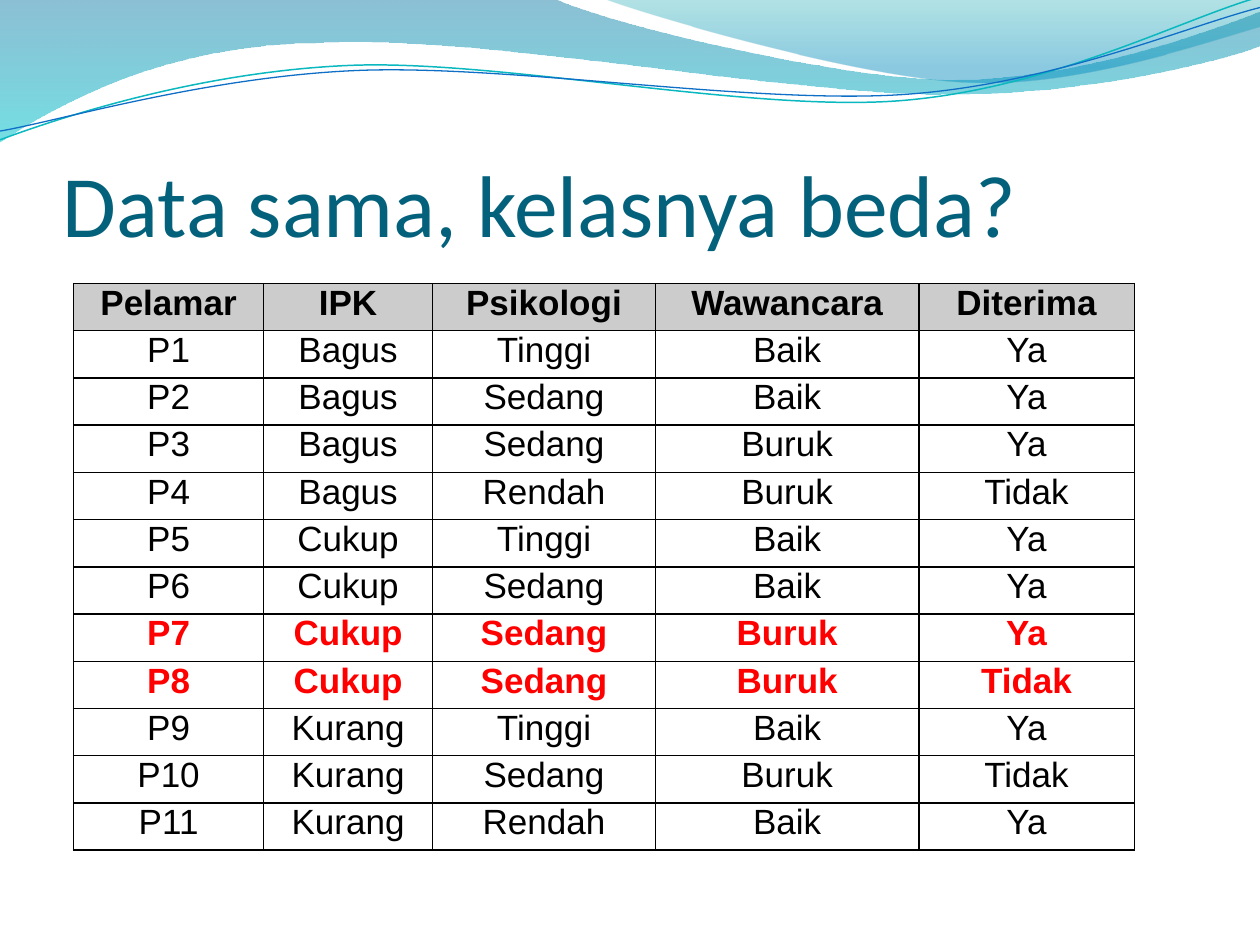
from dataclasses import dataclass
from math import cos, radians, sin

from lxml import etree
from pptx import Presentation
from pptx.dml.color import RGBColor
from pptx.enum.text import MSO_ANCHOR, PP_ALIGN
from pptx.oxml.ns import qn
from pptx.util import Pt

TOP, BOTTOM = MSO_ANCHOR.TOP, MSO_ANCHOR.BOTTOM
CENTER = PP_ALIGN.CENTER

BLACK = RGBColor(0x00, 0x00, 0x00)
RED = RGBColor(0xFF, 0x00, 0x00)
HEADER_GRAY = RGBColor(0xCC, 0xCC, 0xCC)
TITLE_BLUE = RGBColor(0x04, 0x61, 0x7B)
DEEP_BLUE = RGBColor(0x00, 0x74, 0xA1)
AQUA = RGBColor(0x00, 0xC6, 0xCF)
TEAL = RGBColor(0x00, 0xA1, 0xA9)
SKY = RGBColor(0x00, 0x8B, 0xBF)
LINE_TEAL = RGBColor(0x0A, 0xB8, 0xBF)
LINE_BLUE = RGBColor(0x0F, 0x6F, 0xC6)

STRAND_TILT = -2.7


@dataclass(frozen=True)
class Stop:
    position: float
    color: RGBColor
    opacity: int


@dataclass(frozen=True)
class Band:
    """Filled wave; a segment has 1 point (line) or 3 (Bezier curve)."""
    start: tuple
    segments: tuple
    stops: tuple


@dataclass(frozen=True)
class Strand:
    """Thin open wave line, tilted about its pivot."""
    start: tuple
    segments: tuple
    pivot: tuple
    color: RGBColor
    width: float


BANDS = (
    Band((0, -0.7),
         (((316.8, -0.7),),
          ((342.7, 12.2), (478.1, 45.4), (545.8, 45.4)),
          ((614.2, 45.4), (689.8, 18.7), (720, 6.5)),
          ((720.7, 25.9),),
          ((707.8, 31.7), (626.4, 54.7), (537.1, 54)),
          ((447.8, 54), (275, 20.2), (185, 24.5)),
          ((92.9, 25.2), (33.1, 59.8), (-0.7, 81.4))),
         (Stop(0, DEEP_BLUE, 45), Stop(1, AQUA, 55))),
    Band((344.9, -0.7),
         (((366.5, 7.9), (491, 44.6), (553.7, 46.8)),
          ((616.3, 49.7), (691.9, 23), (720, 15.1)),
          ((720, 0),)),
         (Stop(0, TEAL, 30), Stop(0.8, SKY, 45))),
)
STRANDS = (
    Strand((0, 79.9),
           (((34.6, 67), (113.8, 41), (199.4, 37.4)),
            ((284.4, 33.8), (427, 64.1), (513.4, 57.6)),
            ((599.8, 51.1), (675.4, 10.8), (718.6, -1.4))),
           (359.3, 41.4), LINE_TEAL, 0.85),
    Strand((0, 74.9),
           (((33.8, 69.1), (118.1, 43.9), (203.8, 40.3)),
            ((290.2, 36.7), (429.8, 59.8), (516.2, 54)),
            ((601.9, 48.2), (677.5, 15.1), (720, 4.3))),
           (359.6, 42.5), LINE_BLUE, 0.75),
)

COLUMN_WIDTHS = (108.7, 96.5, 127.4, 150.5, 123.1)
ROW_HEIGHT = 27
HEADER = ("Pelamar", "IPK", "Psikologi", "Wawancara", "Diterima")
APPLICANTS = (
    ("P1", "Bagus", "Tinggi", "Baik", "Ya"),
    ("P2", "Bagus", "Sedang", "Baik", "Ya"),
    ("P3", "Bagus", "Sedang", "Buruk", "Ya"),
    ("P4", "Bagus", "Rendah", "Buruk", "Tidak"),
    ("P5", "Cukup", "Tinggi", "Baik", "Ya"),
    ("P6", "Cukup", "Sedang", "Baik", "Ya"),
    ("P7", "Cukup", "Sedang", "Buruk", "Ya"),
    ("P8", "Cukup", "Sedang", "Buruk", "Tidak"),
    ("P9", "Kurang", "Tinggi", "Baik", "Ya"),
    ("P10", "Kurang", "Sedang", "Buruk", "Tidak"),
    ("P11", "Kurang", "Rendah", "Baik", "Ya"),
)
CONFLICTING = {"P7", "P8"}


def turn(point: tuple, pivot: tuple, degrees: float) -> tuple:
    angle = radians(degrees)
    across, down = point[0] - pivot[0], point[1] - pivot[1]
    return (pivot[0] + across * cos(angle) - down * sin(angle),
            pivot[1] + across * sin(angle) + down * cos(angle))


def add_wave(page, start: tuple, segments: tuple, closed: bool):
    """Build the outline from segment ends, then bend the curved segments."""
    ends = [(Pt(x), Pt(y)) for x, y in (segment[-1] for segment in segments)]
    builder = page.shapes.build_freeform(Pt(start[0]), Pt(start[1]))
    builder.add_line_segments(ends, close=closed)
    shape = builder.convert_to_shape()
    shape.shadow.inherit = False
    for edge, segment in zip(list(shape._element.iter(qn("a:lnTo"))), segments):
        if len(segment) == 1:
            continue
        curve = etree.Element(qn("a:cubicBezTo"))
        for x, y in segment:
            etree.SubElement(curve, qn("a:pt"), x=str(Pt(x) - shape.left), y=str(Pt(y) - shape.top))
        edge.getparent().replace(edge, curve)
    return shape


def add_band(page, band: Band) -> None:
    shape = add_wave(page, band.start, band.segments, closed=True)
    shape.line.fill.background()
    shape.fill.gradient()
    shape.fill.gradient_angle = 270
    for target, stop in zip(shape.fill.gradient_stops, band.stops):
        target.position = stop.position
        target.color.rgb = stop.color
    for color, stop in zip(shape.fill._xPr.iter(qn("a:srgbClr")), band.stops):
        etree.SubElement(color, qn("a:alpha"), val=str(stop.opacity * 1000))


def add_strand(page, strand: Strand) -> None:
    level_start = turn(strand.start, strand.pivot, -STRAND_TILT)
    level_segments = tuple(tuple(turn(point, strand.pivot, -STRAND_TILT) for point in segment)
                           for segment in strand.segments)
    shape = add_wave(page, level_start, level_segments, closed=False)
    shape.rotation = STRAND_TILT
    shape.fill.background()
    shape.line.color.rgb = strand.color
    shape.line.width = Pt(strand.width)


def add_span(para, text: str, font: str, size: float, color: RGBColor, bold: bool = False) -> None:
    span = para.add_run()
    span.text = text
    span.font.name = font
    span.font.size = Pt(size)
    span.font.bold = bold
    span.font.color.rgb = color


def add_title(page, text: str) -> None:
    box = page.shapes.add_textbox(Pt(36), Pt(55.8), Pt(648), Pt(90))
    frame = box.text_frame
    frame.word_wrap = True
    frame.vertical_anchor = BOTTOM
    frame.margin_left = frame.margin_right = frame.margin_bottom = 0
    frame.margin_top = Pt(3.6)
    add_span(frame.paragraphs[0], text, "Calibri", 50, TITLE_BLUE)


def add_borders(cell) -> None:
    properties = cell._tc.get_or_add_tcPr()
    for index, side in enumerate(("a:lnL", "a:lnR", "a:lnT", "a:lnB")):
        line = etree.Element(qn(side), w=str(Pt(1)))
        fill = etree.SubElement(line, qn("a:solidFill"))
        etree.SubElement(fill, qn("a:srgbClr"), val=str(BLACK))
        properties.insert(index, line)


def fill_cell(cell, text: str, color: RGBColor, bold: bool, shaded: bool) -> None:
    cell.margin_left = cell.margin_right = Pt(5)
    cell.margin_top = cell.margin_bottom = 0
    cell.vertical_anchor = TOP
    if shaded:
        cell.fill.solid()
        cell.fill.fore_color.rgb = HEADER_GRAY
    else:
        cell.fill.background()
    add_borders(cell)
    para = cell.text_frame.paragraphs[0]
    para.alignment = CENTER
    add_span(para, text, "Arial", 20, color, bold)


def add_applicant_table(page) -> None:
    rows = (HEADER, *APPLICANTS)
    table = page.shapes.add_table(len(rows), len(HEADER), Pt(42), Pt(162),
                                  Pt(sum(COLUMN_WIDTHS)), Pt(ROW_HEIGHT * len(rows))).table
    table.horz_banding = False
    for column, width in zip(table.columns, COLUMN_WIDTHS):
        column.width = Pt(width)
    for row_index, row in enumerate(rows):
        table.rows[row_index].height = Pt(ROW_HEIGHT)
        is_header, conflicting = row is HEADER, row[0] in CONFLICTING
        for column_index, text in enumerate(row):
            fill_cell(table.cell(row_index, column_index), text,
                      RED if conflicting else BLACK, is_header or conflicting, is_header)


if __name__ == "__main__":
    deck = Presentation()
    deck.slide_width, deck.slide_height = Pt(720), Pt(540)
    page = deck.slides.add_slide(deck.slide_layouts[6])
    # Wave decoration
    for band in BANDS:
        add_band(page, band)
    for strand in STRANDS:
        add_strand(page, strand)
    # Title and table
    add_title(page, "Data sama, kelasnya beda?")
    add_applicant_table(page)
    deck.save("out.pptx")
